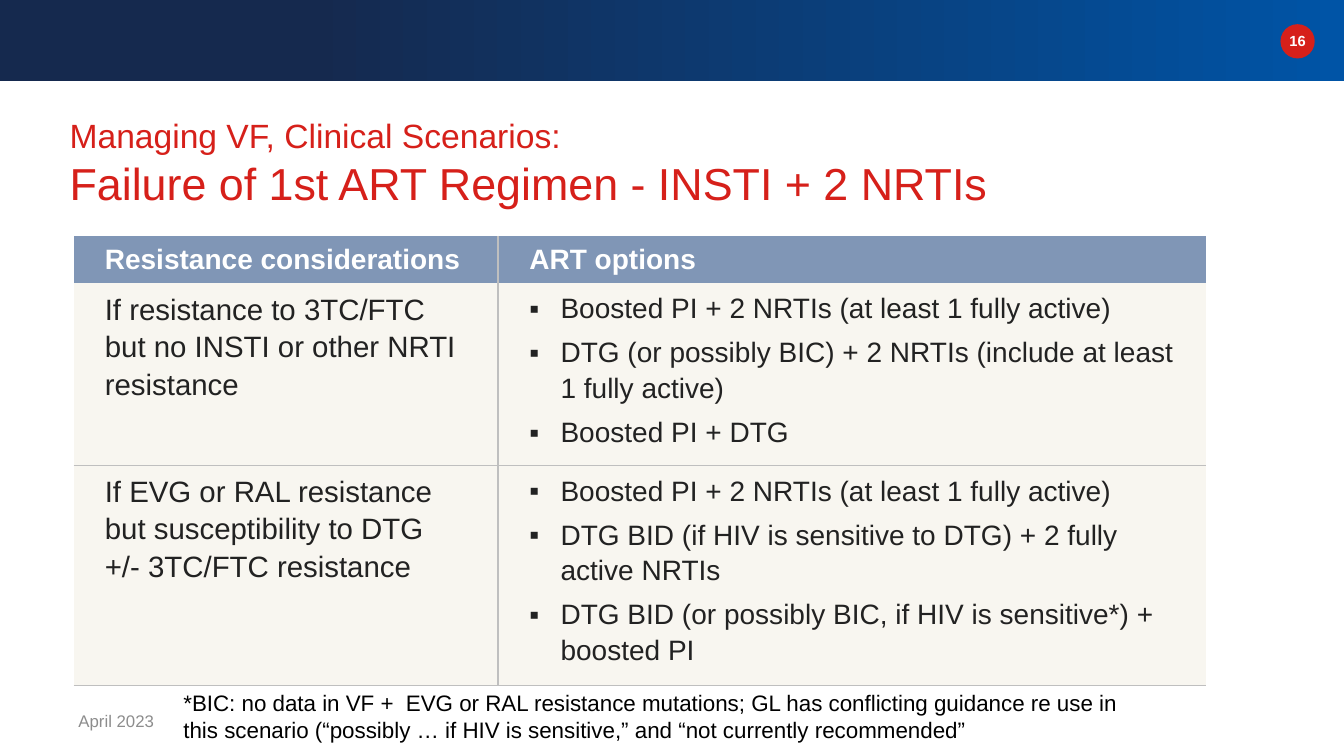
from dataclasses import dataclass
from lxml.etree import SubElement
from pptx import Presentation
from pptx.dml.color import RGBColor
from pptx.enum.shapes import MSO_SHAPE as Shape
from pptx.enum.text import MSO_ANCHOR as Anchor, MSO_AUTO_SIZE as AutoSize, PP_ALIGN as Align
from pptx.oxml.ns import qn
from pptx.util import Pt

TITLE = [("Managing VF, Clinical Scenarios: \n", 24),
         ("Failure of 1st ART Regimen - INSTI + 2 NRTIs", 32)]
HEADINGS = ["Resistance considerations", "ART options"]
SCENARIOS = [
    ("If resistance to 3TC/FTC \nbut no INSTI or other NRTI resistance",
     ["Boosted PI + 2 NRTIs (at least 1 fully active)",
      "DTG (or possibly BIC) + 2 NRTIs (include at least 1 fully active)",
      "Boosted PI + DTG"]),
    ("If EVG or RAL resistance but susceptibility to DTG\n+/- 3TC/FTC resistance",
     ["Boosted PI + 2 NRTIs (at least 1 fully active)",
      "DTG BID (if HIV is sensitive to DTG) + 2 fully active NRTIs",
      "DTG BID (or possibly BIC, if HIV is sensitive*) + boosted PI"]),
]
FOOTNOTE = ("*BIC: no data in VF +  EVG or RAL resistance mutations; GL has conflicting "
            "guidance re use in this scenario (“possibly … if HIV is sensitive,” "
            "and “not currently recommended”")
DATE = "April 2023"
PAGE_NUMBER = "16"

PX = 9144
PAGE_SIZE = (1333, 750)
BANNER = (0, 0, 1333, 80)
BADGE = (1270, 24, 34, 34)
NUMBER_BOX = (1265, 27, 44, 28)
TITLE_BOX = (59, 109, 1150, 71)
TABLE_BOX = (73, 234, 1123, 398)
DATE_BOX = (68, 695, 300, 40)
NOTE_BOX = (172, 679, 968, 66)
COLUMNS = (421, 702)
ROWS = (47, 134, 217)
CELL_PAD = (31, 6)
BULLET_INDENT = (31, -34)


@dataclass(frozen=True)
class Theme:
    font: str = "Arial"
    navy: str = "15294E"
    blue: str = "0054A6"
    red: str = "D6201A"
    white: str = "FFFFFF"
    black: str = "000000"
    gray: str = "8D8D8D"
    ink: str = "222222"
    header: str = "8096B6"
    body: str = "F8F6F0"
    rule: str = "BFBFBF"
    heading_size: float = 20
    scenario_size: float = 21
    option_size: float = 20
    note_size: float = 16
    date_size: float = 12
    number_size: float = 10.5


THEME = Theme()


def color(code):
    return RGBColor.from_string(code)


def scaled(lengths):
    return [length * PX for length in lengths]


def write(para, text, *, size, ink, bold=False, align=None, spacing=None, after=None, bullet=None):
    """Append text to a paragraph, turning newlines into line breaks."""
    props = para._p.get_or_add_pPr()
    if align is not None:
        para.alignment = align
    if spacing:
        para.line_spacing = spacing
    if after:
        para.space_after = Pt(after)
    if bullet:
        margin, indent = scaled(BULLET_INDENT)
        props.set("marL", str(margin))
        props.set("indent", str(indent))
        SubElement(SubElement(props, qn("a:buClr")), qn("a:srgbClr"), val=ink)
        SubElement(props, qn("a:buFont"), typeface=THEME.font)
        SubElement(props, qn("a:buChar"), char=bullet)
    for index, line in enumerate(text.split("\n")):
        if index:
            para.add_line_break()
            SubElement(para._p[-1], qn("a:rPr"), sz=str(int(size * 100)))
        if line:
            span = para.add_run()
            span.text = line
            span.font.name = THEME.font
            span.font.size = Pt(size)
            span.font.bold = bold
            span.font.color.rgb = color(ink)


def add_text(page, bounds, text, anchor=Anchor.TOP, **style):
    frame = page.shapes.add_textbox(*scaled(bounds)).text_frame
    frame.word_wrap = True
    frame.vertical_anchor = anchor
    write(frame.paragraphs[0], text, **style)


def add_block(page, kind, bounds):
    block = page.shapes.add_shape(kind, *scaled(bounds))
    block.shadow.inherit = False
    block.line.fill.background()
    return block


def add_banner(page):
    fill = add_block(page, Shape.RECTANGLE, BANNER).fill
    fill.gradient()
    fill.gradient_angle = 0
    for stop, position, code in zip(fill.gradient_stops, (0.23, 1), (THEME.navy, THEME.blue)):
        stop.position = position
        stop.color.rgb = color(code)
    badge = add_block(page, Shape.OVAL, BADGE)
    badge.fill.solid()
    badge.fill.fore_color.rgb = color(THEME.red)
    add_text(page, NUMBER_BOX, PAGE_NUMBER, size=THEME.number_size, ink=THEME.white,
             bold=True, align=Align.CENTER)


def add_title(page):
    title = page.shapes.title
    title.left, title.top, title.width, title.height = scaled(TITLE_BOX)
    frame = title.text_frame
    frame.word_wrap = True
    frame.auto_size = AutoSize.NONE
    frame.vertical_anchor = Anchor.TOP
    for text, size in TITLE:
        write(frame.paragraphs[0], text, size=size, ink=THEME.red, align=Align.LEFT)


def format_cell(cell, row, column):
    cell.margin_left = cell.margin_right = CELL_PAD[0] * PX
    cell.margin_top = cell.margin_bottom = CELL_PAD[1] * PX
    cell.vertical_anchor = Anchor.TOP if row else Anchor.MIDDLE
    ruled = {"L": column > 0, "R": column == 0, "T": row > 1, "B": row > 0}
    props = cell._tc.get_or_add_tcPr()
    for side, shown in ruled.items():
        line = SubElement(props, qn(f"a:ln{side}"), w=str(Pt(1)))
        if shown:
            SubElement(SubElement(line, qn("a:solidFill")), qn("a:srgbClr"), val=THEME.rule)
        else:
            SubElement(line, qn("a:noFill"))
    cell.fill.solid()
    cell.fill.fore_color.rgb = color(THEME.body if row else THEME.header)


def add_scenarios(page):
    table = page.shapes.add_table(len(ROWS), len(COLUMNS), *scaled(TABLE_BOX)).table
    table.horz_banding = False
    for column, width in zip(table.columns, scaled(COLUMNS)):
        column.width = width
    for row, height in zip(table.rows, scaled(ROWS)):
        row.height = height
    for row in range(len(ROWS)):
        for column in range(len(COLUMNS)):
            format_cell(table.cell(row, column), row, column)
    for column, heading in enumerate(HEADINGS):
        write(table.cell(0, column).text_frame.paragraphs[0], heading, spacing=1.02,
              size=THEME.heading_size, ink=THEME.white, bold=True)
    for row, (scenario, options) in enumerate(SCENARIOS, 1):
        write(table.cell(row, 0).text_frame.paragraphs[0], scenario, spacing=1.14,
              size=THEME.scenario_size, ink=THEME.ink)
        frame = table.cell(row, 1).text_frame
        for index, option in enumerate(options):
            para = frame.add_paragraph() if index else frame.paragraphs[0]
            write(para, option, spacing=1.14, after=6, bullet="▪",
                  size=THEME.option_size, ink=THEME.ink)


def main():
    deck = Presentation()
    deck.slide_width, deck.slide_height = scaled(PAGE_SIZE)
    page = deck.slides.add_slide(deck.slide_layouts[5])
    add_banner(page)
    add_title(page)
    add_text(page, DATE_BOX, DATE, Anchor.MIDDLE, size=THEME.date_size, ink=THEME.gray)
    add_scenarios(page)
    add_text(page, NOTE_BOX, FOOTNOTE, size=THEME.note_size, ink=THEME.black)
    deck.save("out.pptx")


if __name__ == "__main__":
    main()
